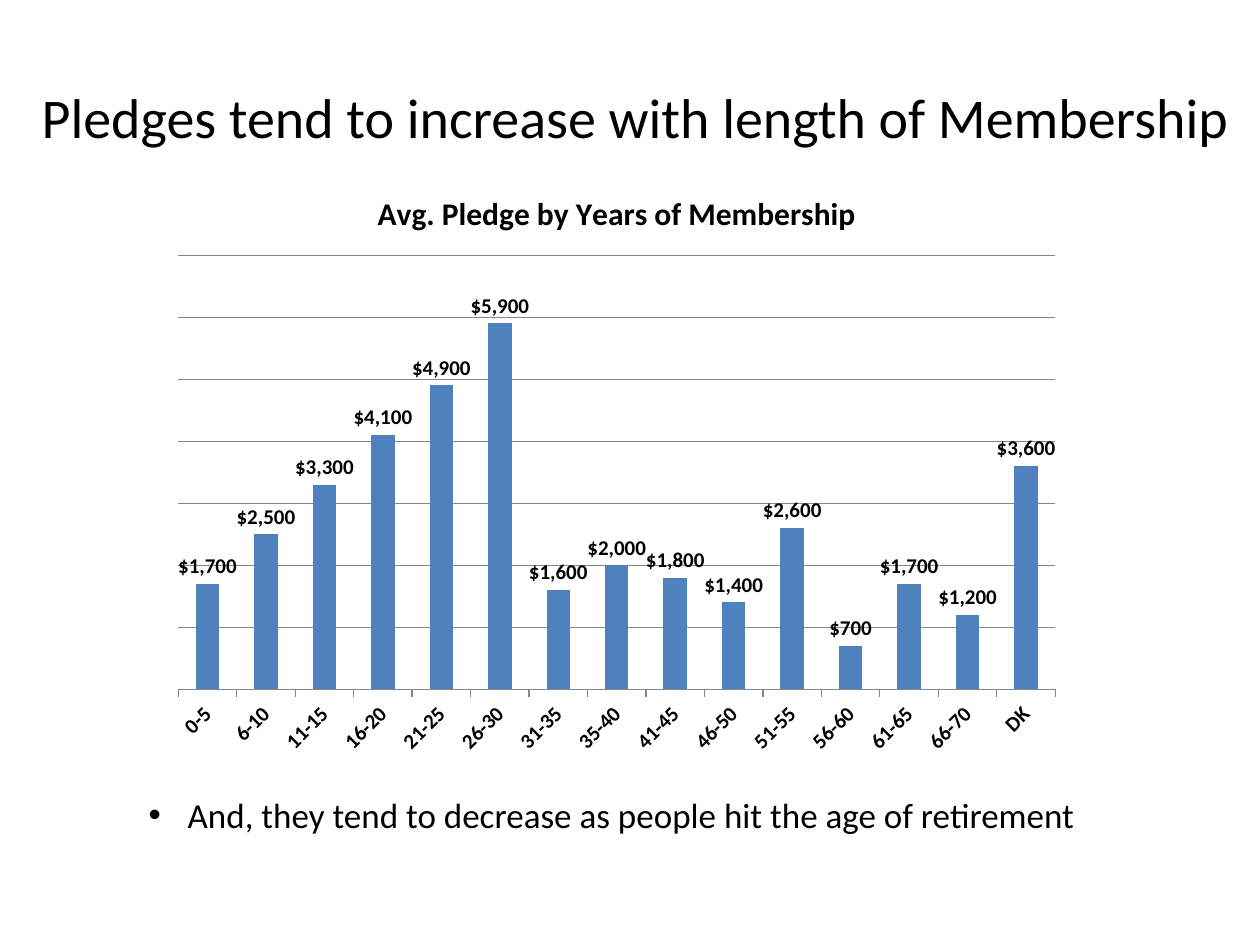
"""Build a slide that charts the average pledge by years of membership."""
from dataclasses import dataclass

from pptx import Presentation, util as u
from pptx.chart.data import CategoryChartData
from pptx.dml.color import RGBColor
from pptx.enum import chart as c, text as t


@dataclass(frozen=True)
class Theme:
    """Colours, font and type sizes."""
    font: str = "Calibri"
    ink: str = "000000"
    bar: str = "4F81BD"
    line: str = "868686"
    title: int = 32
    body: int = 20
    chart_title: int = 18
    label: int = 12


def format_font(font, theme, size, bold=False):
    """Apply the theme's typeface and ink to a font."""
    font.name, font.size, font.bold = theme.font, u.Pt(size), bold
    font.color.rgb = RGBColor.from_string(theme.ink)


def write_text(frame, words, theme, size, bold=False, align=None, anchor=None, wrap=True):
    """Write one formatted paragraph and return it."""
    frame.word_wrap = wrap
    if anchor is not None:
        frame.vertical_anchor = anchor
    paragraph = frame.paragraphs[0]
    paragraph.alignment = align
    run = paragraph.add_run()
    run.text = words
    format_font(run.font, theme, size, bold)
    return paragraph


class SlideBuilder:
    """Place elements on a slide with a grid of 100 columns and 75 rows."""

    def __init__(self, presentation, theme):
        """Add a title and content slide."""
        self.theme = theme
        self.column = presentation.slide_width / 100
        self.row = presentation.slide_height / 75
        self.slide = presentation.slides.add_slide(presentation.slide_layouts[1])

    def box(self, left, top, width, height):
        """Turn columns and rows into lengths."""
        return (int(left * self.column), int(top * self.row),
                int(width * self.column), int(height * self.row))

    def place(self, shape, area):
        """Move and size a shape."""
        shape.left, shape.top, shape.width, shape.height = self.box(*area)

    def title(self, words, area):
        """Fill the title placeholder."""
        shape = self.slide.shapes.title
        self.place(shape, area)
        write_text(shape.text_frame, words, self.theme, self.theme.title,
                   align=t.PP_ALIGN.CENTER, anchor=t.MSO_ANCHOR.MIDDLE)

    def bullet(self, words, area):
        """Fill the body placeholder with one bullet."""
        shape = self.slide.placeholders[1]
        self.place(shape, area)
        paragraph = write_text(shape.text_frame, words, self.theme, self.theme.body,
                               anchor=t.MSO_ANCHOR.TOP, wrap=False)
        shape.text_frame.auto_size = t.MSO_AUTO_SIZE.SHAPE_TO_FIT_TEXT
        paragraph.space_before = u.Pt(0)
        indent = u.Inches(0.31)
        properties = paragraph._p.get_or_add_pPr()
        properties.set("marL", str(indent))
        properties.set("indent", str(-indent))

    def column_chart(self, title, values, area, maximum, step, number_format):
        """Add a labelled column chart without a value axis."""
        theme = self.theme
        data = CategoryChartData()
        data.categories = list(values)
        data.add_series("Series 1", list(values.values()))
        chart = self.slide.shapes.add_chart(
            c.XL_CHART_TYPE.COLUMN_CLUSTERED, *self.box(*area), data).chart
        format_font(chart.font, theme, 10)
        chart.has_legend = False
        chart.has_title = True
        write_text(chart.chart_title.text_frame, title, theme, theme.chart_title, bold=True)
        chart.chart_title.include_in_layout = False

        plot = chart.plots[0]
        plot.gap_width = 150
        plot.vary_by_categories = False
        fill = plot.series[0].format.fill
        fill.solid()
        fill.fore_color.rgb = RGBColor.from_string(theme.bar)
        plot.has_data_labels = True
        labels = plot.data_labels
        labels.show_value = True
        labels.position = c.XL_LABEL_POSITION.OUTSIDE_END
        labels.number_format, labels.number_format_is_linked = number_format, False
        format_font(labels.font, theme, theme.label, bold=True)

        value_axis, category_axis = chart.value_axis, chart.category_axis
        value_axis.minimum_scale, value_axis.maximum_scale = 0, maximum
        value_axis.major_unit = step
        value_axis.has_major_gridlines = True
        value_axis.visible = False
        category_axis.major_tick_mark = c.XL_TICK_MARK.OUTSIDE
        format_font(category_axis.tick_labels.font, theme, theme.label, bold=True)
        category_axis._element.txPr.bodyPr.set("rot", str(-45 * 60000))
        for item in (value_axis.major_gridlines, category_axis):
            item.format.line.color.rgb = RGBColor.from_string(theme.line)
            item.format.line.width = u.Pt(0.75)


PLEDGES = {
    "0-5": 1700, "6-10": 2500, "11-15": 3300, "16-20": 4100, "21-25": 4900,
    "26-30": 5900, "31-35": 1600, "35-40": 2000, "41-45": 1800, "46-50": 1400,
    "51-55": 2600, "56-60": 700, "61-65": 1700, "66-70": 1200, "DK": 3600,
}


def main():
    """Build and save the slide."""
    presentation = Presentation()
    presentation.slide_width, presentation.slide_height = u.Inches(10), u.Inches(7.5)
    builder = SlideBuilder(presentation, Theme())
    builder.title("Pledges tend to increase with length of Membership", (1.7, 3, 97.5, 12.5))
    builder.column_chart("Avg. Pledge by Years of Membership", PLEDGES,
                         (12.7, 13.3, 72.5, 47.5), 7000, 1000, '"$"#,##0')
    builder.bullet("And, they tend to decrease as people hit the age of retirement",
                   (10.8, 62.5, 76.3, 4.4))
    presentation.save("out.pptx")


if __name__ == "__main__":
    main()
